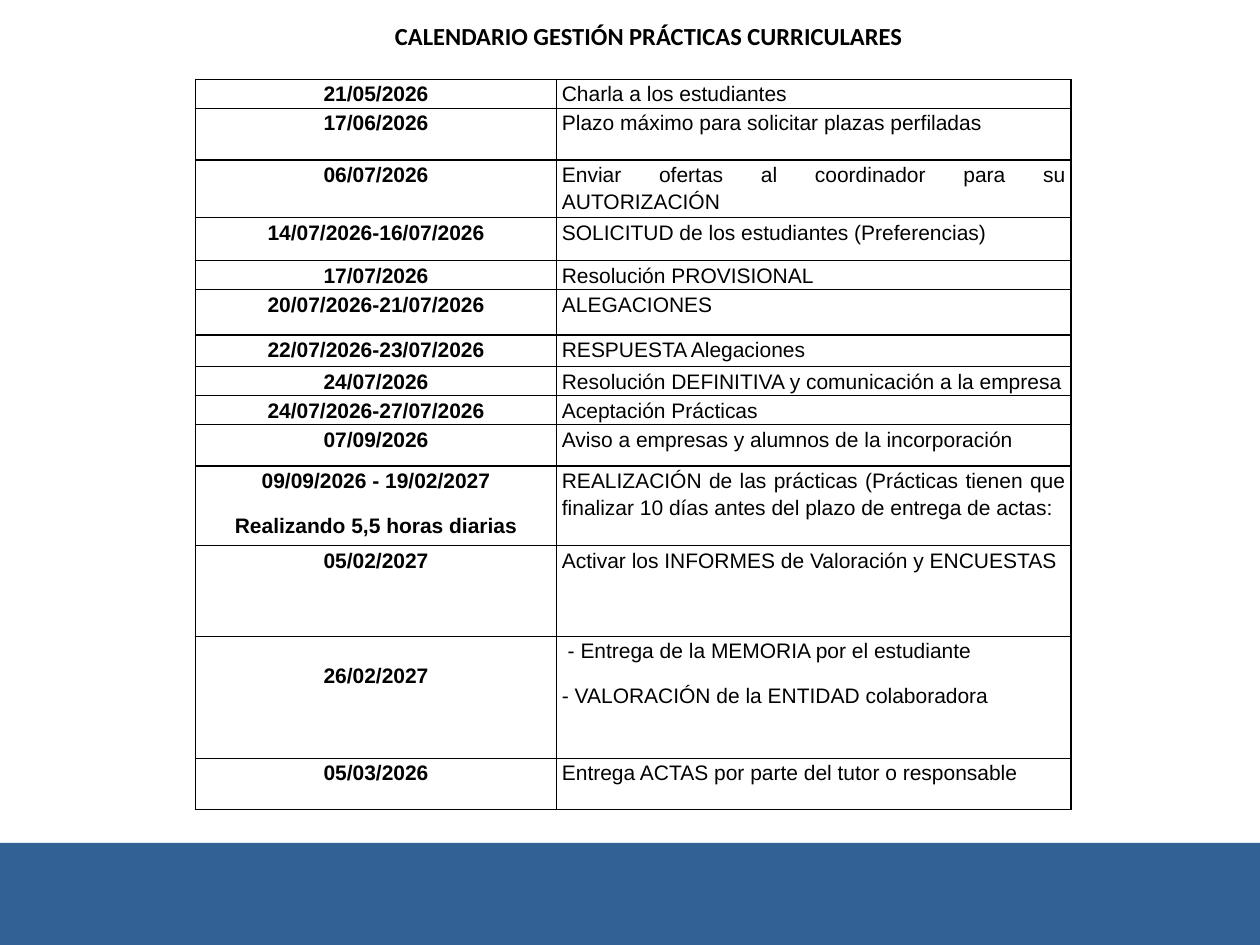
from dataclasses import dataclass
from lxml.etree import fromstring
from pptx import Presentation
from pptx.dml.color import RGBColor as RGB
from pptx.enum.shapes import MSO_SHAPE as SHAPE
from pptx.enum.text import MSO_ANCHOR as ANCHOR, PP_ALIGN as ALIGN
from pptx.util import Inches, Pt

TITLE = "CALENDARIO GESTIÓN PRÁCTICAS CURRICULARES"
CALENDAR = [
    (0.23, "21/05/2026", "Charla a los estudiantes"),
    (0.41, "17/06/2026", "Plazo máximo para solicitar plazas perfiladas"),
    (0.46, "06/07/2026", "Enviar ofertas al coordinador para su AUTORIZACIÓN"),
    (0.34, "14/07/2026-16/07/2026", "SOLICITUD de los estudiantes (Preferencias)"),
    (0.23, "17/07/2026", "Resolución PROVISIONAL"),
    (0.36, "20/07/2026-21/07/2026", "ALEGACIONES"),
    (0.25, "22/07/2026-23/07/2026", "RESPUESTA Alegaciones"),
    (0.23, "24/07/2026", "Resolución DEFINITIVA y comunicación a la empresa"),
    (0.23, "24/07/2026-27/07/2026", "Aceptación Prácticas"),
    (0.33, "07/09/2026", "Aviso a empresas y alumnos de la incorporación"),
    (0.63, "09/09/2026 - 19/02/2027\nRealizando 5,5 horas diarias",
     "REALIZACIÓN de las prácticas (Prácticas tienen que finalizar 10 días "
     "antes del plazo de entrega de actas:"),
    (0.72, "05/02/2027", "Activar los INFORMES de Valoración y ENCUESTAS"),
    (0.97, "26/02/2027",
     " - Entrega de la MEMORIA por el estudiante\n- VALORACIÓN de la ENTIDAD colaboradora"),
    (0.41, "05/03/2026", "Entrega ACTAS por parte del tutor o responsable"),
]
COLUMNS = [(2.87, ALIGN.CENTER, True), (4.08, ALIGN.JUSTIFY, False)]
LOWERED = {"26/02/2027": 0.2}


@dataclass(frozen=True)
class Theme:
    ink: str = "000000"
    band: str = "326195"
    title_font: str = "Calibri"
    body_font: str = "Arial"
    title_size: int = 14
    body_size: int = 12
    border: float = 0.75


THEME = Theme()
NS = "http://schemas.openxmlformats.org/drawingml/2006/main"


def style(p, font, size, bold, align):
    p.alignment = align
    for r in p.runs:
        r.font.name, r.font.size, r.font.bold = font, Pt(size), bold
        r.font.color.rgb = RGB.from_string(THEME.ink)


def add_borders(cell):
    tc_pr = cell._tc.get_or_add_tcPr()
    for i, side in enumerate("LRTB"):
        tc_pr.insert(i, fromstring(
            f'<a:ln{side} xmlns:a="{NS}" w="{Pt(THEME.border)}"><a:solidFill>'
            f'<a:srgbClr val="{THEME.ink}"/></a:solidFill></a:ln{side}>'))


def fill_cell(cell, text, align, bold):
    cell.margin_left = cell.margin_right = Inches(0.04)
    cell.margin_top, cell.margin_bottom = Inches(LOWERED.get(text, 0)), 0
    cell.vertical_anchor = ANCHOR.TOP
    cell.fill.background()
    add_borders(cell)
    cell.text_frame.text = text
    for i, p in enumerate(cell.text_frame.paragraphs):
        style(p, THEME.body_font, THEME.body_size, bold, align)
        p.line_spacing = 1.15
        if i:
            p.space_before = Pt(10)


def add_band(slide, prs):
    height = Inches(0.81)
    sp = slide.shapes.add_shape(SHAPE.RECTANGLE, 0, prs.slide_height - height,
                                prs.slide_width, height)
    sp.shadow.inherit = False
    sp.fill.solid()
    sp.fill.fore_color.rgb = RGB.from_string(THEME.band)
    sp.line.fill.background()


def set_title(slide):
    title = slide.shapes.title
    title.left, title.top, title.width, title.height = map(Inches, (0.3, 0.12, 9.7, 0.57))
    tf = title.text_frame
    tf.text = TITLE
    tf.vertical_anchor = ANCHOR.TOP
    style(tf.paragraphs[0], THEME.title_font, THEME.title_size, True, ALIGN.CENTER)


def add_calendar(slide):
    width = sum(col[0] for col in COLUMNS)
    height = sum(row[0] for row in CALENDAR)
    table = slide.shapes.add_table(len(CALENDAR), len(COLUMNS), Inches(1.55), Inches(0.63),
                                   Inches(width), Inches(height)).table
    table.first_row = table.horz_banding = False
    for column, (col_width, _, _) in zip(table.columns, COLUMNS):
        column.width = Inches(col_width)
    for row, (row_height, *texts) in zip(table.rows, CALENDAR):
        row.height = Inches(row_height)
        for cell, text, (_, align, bold) in zip(row.cells, texts, COLUMNS):
            fill_cell(cell, text, align, bold)


def main():
    prs = Presentation()
    prs.slide_width, prs.slide_height = Inches(10), Inches(7.5)
    slide = prs.slides.add_slide(prs.slide_layouts[5])
    add_band(slide, prs)
    set_title(slide)
    add_calendar(slide)
    prs.save("out.pptx")


if __name__ == "__main__":
    main()
